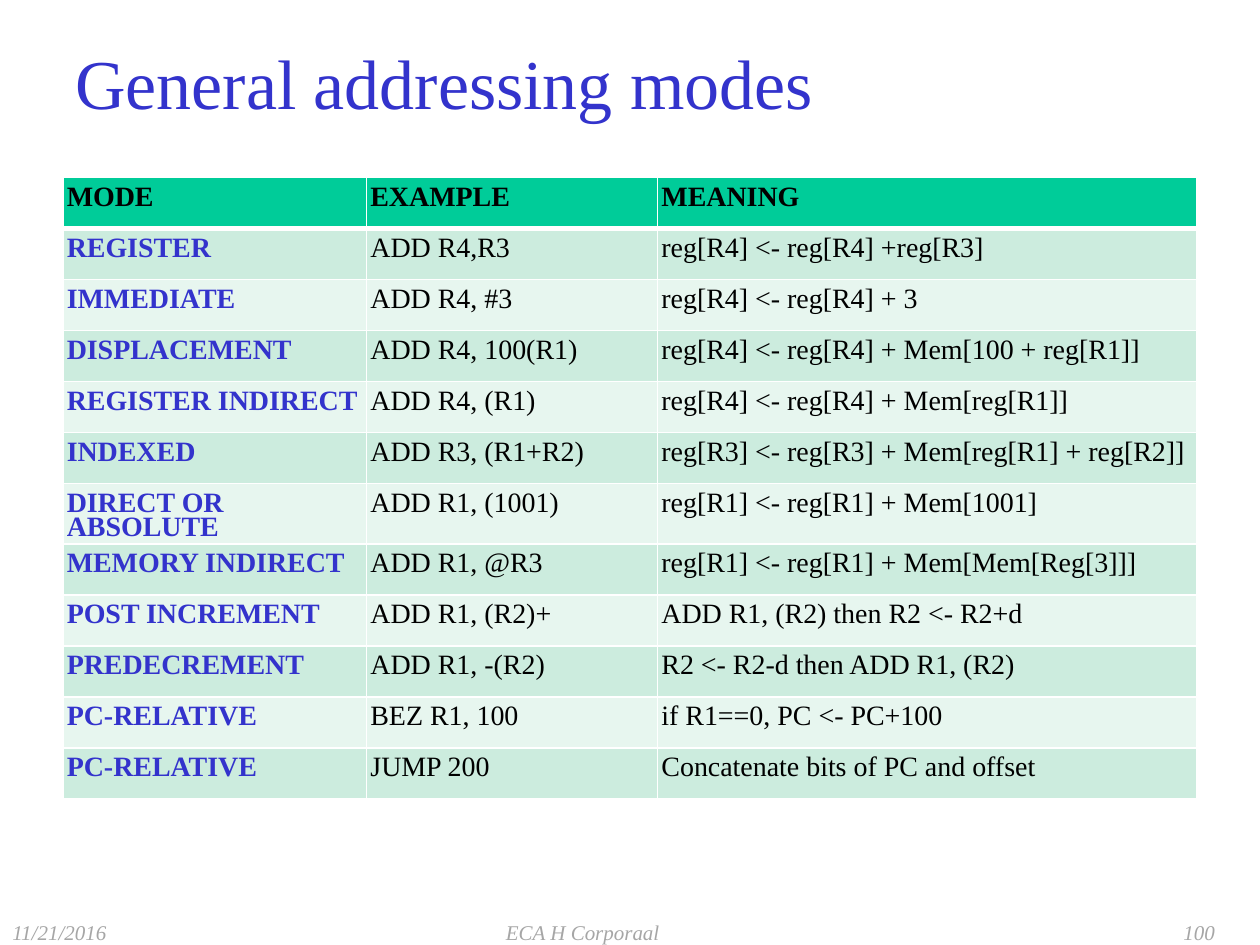
from typing import NamedTuple

from lxml.etree import SubElement
from pptx import Presentation
from pptx.dml.color import RGBColor as Rgb
from pptx.enum.text import MSO_ANCHOR as Anchor, PP_ALIGN as Align
from pptx.oxml.ns import qn
from pptx.util import Inches, Pt

FONT = "Times New Roman"
HUES = {
    "blue": "3333CC",
    "black": "000000",
    "gray": "A6A6A6",
    "white": "FFFFFF",
    "head": "00CC99",
    "dark": "CCECDE",
    "light": "E7F6EF",
}


class Mode(NamedTuple):
    name: str
    sample: str
    sense: str


class Label(NamedTuple):
    text: str
    left: float
    top: float
    width: float
    height: float
    size: int
    hue: str
    align: Align = Align.LEFT
    italic: bool = True


HEAD = Mode("MODE", "EXAMPLE", "MEANING")
MODES = [
    Mode("REGISTER", "ADD R4,R3", "reg[R4] <- reg[R4] +reg[R3]"),
    Mode("IMMEDIATE", "ADD R4, #3", "reg[R4] <- reg[R4] + 3"),
    Mode("DISPLACEMENT", "ADD R4, 100(R1)", "reg[R4] <- reg[R4] + Mem[100 + reg[R1]]"),
    Mode("REGISTER INDIRECT", "ADD R4, (R1)", "reg[R4] <- reg[R4] + Mem[reg[R1]]"),
    Mode("INDEXED", "ADD R3, (R1+R2)", "reg[R3] <- reg[R3] + Mem[reg[R1] + reg[R2]]"),
    Mode("DIRECT OR ABSOLUTE", "ADD R1, (1001)", "reg[R1] <- reg[R1] + Mem[1001]"),
    Mode("MEMORY INDIRECT", "ADD R1, @R3", "reg[R1] <- reg[R1] + Mem[Mem[Reg[3]]]"),
    Mode("POST INCREMENT", "ADD R1, (R2)+", "ADD R1, (R2) then R2 <- R2+d"),
    Mode("PREDECREMENT", "ADD R1, -(R2)", "R2 <- R2-d then ADD R1, (R2)"),
    Mode("PC-RELATIVE", "BEZ R1, 100", "if R1==0, PC <- PC+100"),
    Mode("PC-RELATIVE", "JUMP 200", "Concatenate bits of PC and offset"),
]
WIDTHS = [2.41, 2.31, 4.28]
TITLE = Label("General addressing modes", 0.5, 0.24, 9, 0.82, 40, "blue", italic=False)
FOOTER = [
    Label("11/21/2016", 0, 7.3, 2.33, 0.2, 12, "gray"),
    Label("ECA H Corporaal", 3.04, 7.3, 3.17, 0.2, 12, "gray", Align.CENTER),
    Label("100", 7.41, 7.3, 2.33, 0.2, 12, "gray", Align.RIGHT),
]


def write(frame, text: str, *, size: int, hue: str, bold: bool = False,
          italic: bool = False, align: Align = Align.LEFT, pitch=None) -> None:
    frame.word_wrap = True
    para = frame.paragraphs[0]
    para.alignment = align
    para.line_spacing = pitch
    run = para.add_run()
    run.text = text
    font = run.font
    font.name, font.size = FONT, Pt(size)
    font.bold, font.italic = bold, italic
    font.color.rgb = Rgb.from_string(HUES[hue])


def put_label(slide, label: Label) -> None:
    spot = (Inches(v) for v in (label.left, label.top, label.width, label.height))
    frame = slide.shapes.add_textbox(*spot).text_frame
    frame.vertical_anchor = Anchor.MIDDLE
    write(frame, label.text, size=label.size, hue=label.hue,
          italic=label.italic, align=label.align)


def edge(cell, top: int, bottom: int) -> None:
    props = cell._tc.get_or_add_tcPr()
    sides = {"lnL": 1, "lnR": 1, "lnT": top, "lnB": bottom}
    for spot, (side, width) in enumerate(sides.items()):
        line = SubElement(props, qn(f"a:{side}"), w=str(Pt(width)))
        fill = SubElement(line, qn("a:solidFill"))
        SubElement(fill, qn("a:srgbClr"), val=HUES["white"])
        props.insert(spot, line)


def put_cell(cell, text: str, row: int, col: int) -> None:
    cell.margin_left = cell.margin_right = Inches(0.03)
    cell.margin_top, cell.margin_bottom = Inches(0.08), Inches(0.01)
    band = "head" if row == 0 else "dark" if row % 2 else "light"
    cell.fill.solid()
    cell.fill.fore_color.rgb = Rgb.from_string(HUES[band])
    edge(cell, 3 if row == 1 else 1, 3 if row == 0 else 1)
    write(cell.text_frame, text, size=16, bold=row == 0 or col == 0,
          hue="blue" if row and col == 0 else "black", pitch=Pt(14))


def put_table(slide) -> None:
    rows = [HEAD, *MODES]
    table = slide.shapes.add_table(
        len(rows), len(WIDTHS), Inches(0.5), Inches(1.41),
        Inches(sum(WIDTHS)), Inches(4.86)).table
    for col, width in enumerate(WIDTHS):
        table.columns[col].width = Inches(width)
    for row, mode in enumerate(rows):
        for col, text in enumerate(mode):
            put_cell(table.cell(row, col), text, row, col)


def main() -> None:
    deck = Presentation()
    deck.slide_width, deck.slide_height = Inches(10), Inches(7.5)
    slide = deck.slides.add_slide(deck.slide_layouts[6])
    put_label(slide, TITLE)
    put_table(slide)
    for label in FOOTER:
        put_label(slide, label)
    deck.save("out.pptx")


if __name__ == "__main__":
    main()
